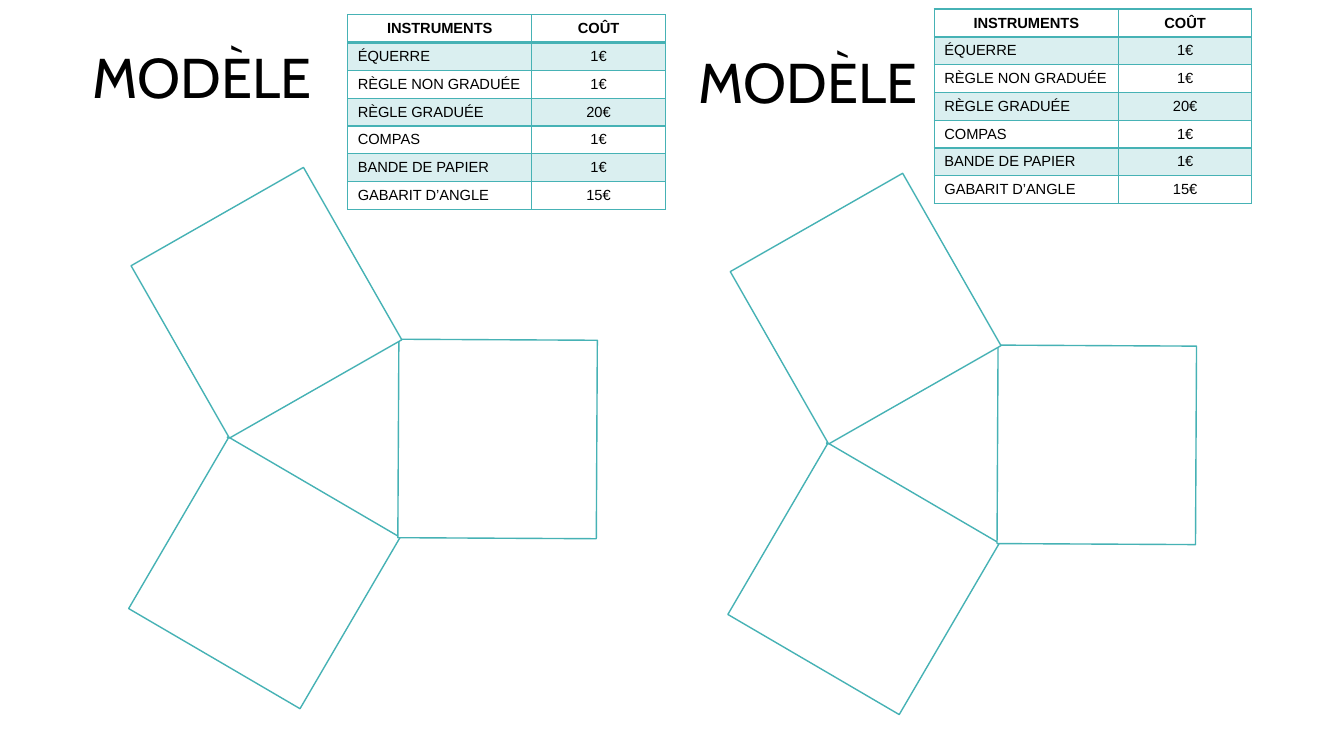
from lxml import etree
from pptx import Presentation
from pptx.dml.color import RGBColor
from pptx.enum.shapes import MSO_SHAPE
from pptx.enum.text import MSO_ANCHOR, MSO_AUTO_SIZE, PP_ALIGN
from pptx.oxml.ns import qn
from pptx.util import Pt

TRIANGLE = MSO_SHAPE.ISOSCELES_TRIANGLE
SQUARE = MSO_SHAPE.RECTANGLE
LEFT = PP_ALIGN.LEFT
CENTER = PP_ALIGN.CENTER
MIDDLE = MSO_ANCHOR.MIDDLE
FIT_SHAPE = MSO_AUTO_SIZE.SHAPE_TO_FIT_TEXT

TEAL = RGBColor(0x46, 0xB2, 0xB5)
WHITE = RGBColor(0xFF, 0xFF, 0xFF)
BLACK = RGBColor(0x00, 0x00, 0x00)

TITLE_FONT = {"name": "Cabin", "size": Pt(40)}
TABLE_FONT = {"name": "Arial", "size": Pt(10.5)}
BAND_ALPHA = "20000"

COSTS = [
    ("INSTRUMENTS", "COÛT"),
    ("ÉQUERRE", "1€"),
    ("RÈGLE NON GRADUÉE", "1€"),
    ("RÈGLE GRADUÉE", "20€"),
    ("COMPAS", "1€"),
    ("BANDE DE PAPIER", "1€"),
    ("GABARIT D’ANGLE", "15€"),
]
COLUMN_SHARES = (0.58, 0.42)

SIDE = 141.8
TRIANGLE_HEIGHT = 123.1
FIGURE_PARTS = [
    (TRIANGLE, 65.8, 88, TRIANGLE_HEIGHT, 30.3),
    (SQUARE, 0, 193, SIDE, 30.3),
    (SQUARE, 166.5, 97.3, SIDE, 90.3),
    (SQUARE, 1.4, 0, SIDE, 60.3),
]

PANELS = [
    {
        "title": (59, 26.6, 210.2, 55.4),
        "figure": (118, 145.4),
        "table": (248.4, 10.6, 226.8, 139),
    },
    {
        "title": (491.8, 30.2, 210.2, 55.4),
        "figure": (546, 149.6),
        "table": (667.4, 6.5, 226.8, 139),
    },
]


def write_text(paragraph, text, font_format):
    run = paragraph.add_run()
    run.text = text
    for attribute, value in font_format.items():
        setattr(run.font, attribute, value)
    run.font.color.rgb = BLACK


def add_title(slide, box):
    title = slide.shapes.add_textbox(*map(Pt, box))
    frame = title.text_frame
    frame.word_wrap = True
    frame.auto_size = FIT_SHAPE
    write_text(frame.paragraphs[0], "MODÈLE", TITLE_FONT)


def add_figure(slide, origin):
    left, top = origin
    group = slide.shapes.add_group_shape()
    for kind, offset_x, offset_y, height, rotation in FIGURE_PARTS:
        shape = group.shapes.add_shape(
            kind, Pt(left + offset_x), Pt(top + offset_y), Pt(SIDE), Pt(height)
        )
        shape.rotation = rotation
        shape.shadow.inherit = False
        shape.fill.solid()
        shape.fill.fore_color.rgb = WHITE
        shape.line.color.rgb = TEAL
        shape.line.width = Pt(1)


def set_borders(cell, bottom_width):
    properties = cell._tc.get_or_add_tcPr()
    widths = {"a:lnL": 1, "a:lnR": 1, "a:lnT": 1, "a:lnB": bottom_width}
    for index, (tag, width) in enumerate(widths.items()):
        border = etree.Element(qn(tag), w=str(Pt(width)))
        fill = etree.SubElement(border, qn("a:solidFill"))
        etree.SubElement(fill, qn("a:srgbClr"), val=str(TEAL))
        properties.insert(index, border)


def set_fill(cell, banded):
    if not banded:
        cell.fill.background()
        return
    cell.fill.solid()
    cell.fill.fore_color.rgb = TEAL
    color = cell._tc.tcPr.find(qn("a:solidFill")).find(qn("a:srgbClr"))
    etree.SubElement(color, qn("a:alpha"), val=BAND_ALPHA)


def add_cost_table(slide, box):
    left, top, width, height = box
    table = slide.shapes.add_table(
        len(COSTS), len(COLUMN_SHARES), *map(Pt, box)
    ).table
    table.first_row = False
    table.horz_banding = False
    for column, share in zip(table.columns, COLUMN_SHARES):
        column.width = Pt(width * share)
    for row in table.rows:
        row.height = Pt(height / len(COSTS))
    for row_index, texts in enumerate(COSTS):
        header = row_index == 0
        for column_index, text in enumerate(texts):
            cell = table.cell(row_index, column_index)
            cell.vertical_anchor = MIDDLE
            set_fill(cell, row_index % 2 == 1)
            set_borders(cell, 2 if header else 1)
            paragraph = cell.text_frame.paragraphs[0]
            paragraph.alignment = CENTER if header or column_index else LEFT
            write_text(paragraph, text, {**TABLE_FONT, "bold": header})


def add_panel(slide, panel):
    add_title(slide, panel["title"])
    add_figure(slide, panel["figure"])
    add_cost_table(slide, panel["table"])


def main():
    presentation = Presentation()
    presentation.slide_width = Pt(960)
    presentation.slide_height = Pt(540)
    slide = presentation.slides.add_slide(presentation.slide_layouts[6])
    for panel in PANELS:
        add_panel(slide, panel)
    presentation.save("out.pptx")


if __name__ == "__main__":
    main()
